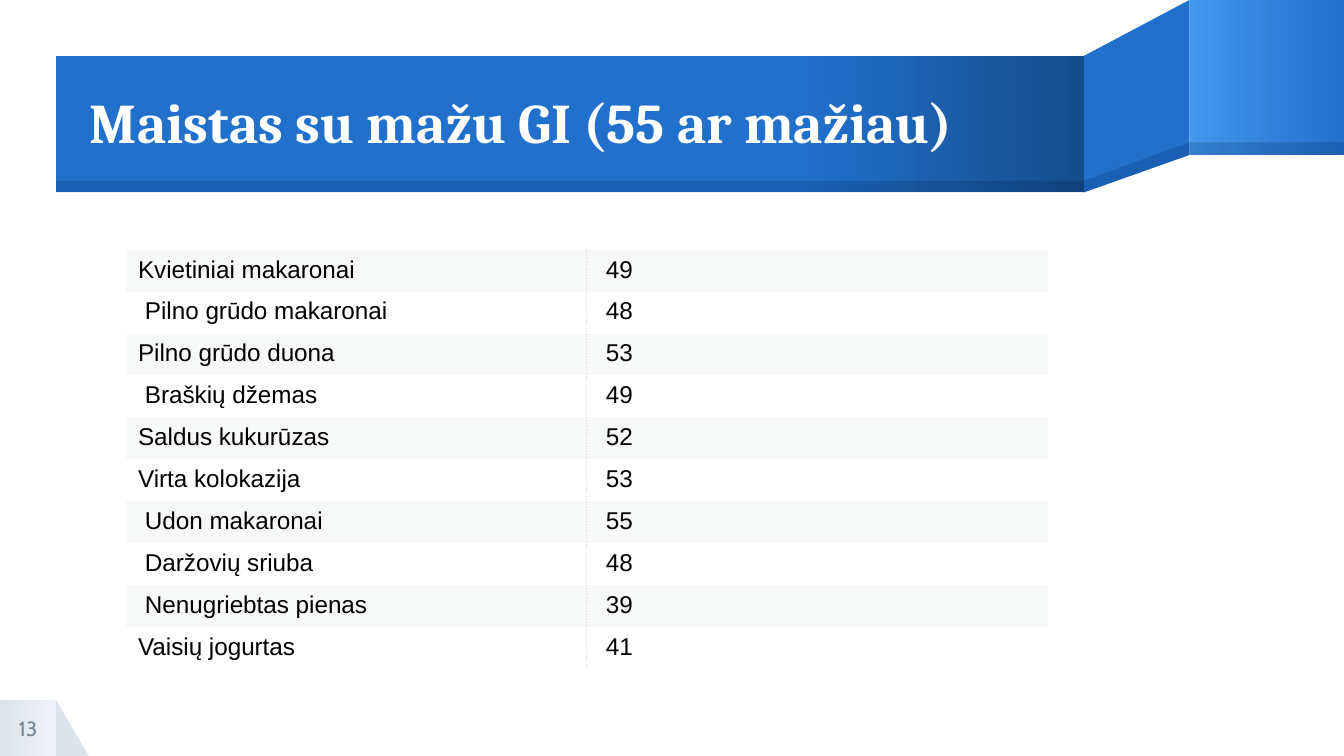
from pptx import Presentation
from pptx.dml.color import RGBColor
from pptx.enum.shapes import MSO_SHAPE as Shape
from pptx.enum.text import MSO_ANCHOR as Anchor, PP_ALIGN as Align
from pptx.oxml import parse_xml
from pptx.oxml.ns import nsdecls, qn
from pptx.util import Cm, Pt
from lxml import etree

TITLE = "Maistas su mažu GI (55 ar mažiau)"
PAGE = "13"
# food, glycaemic index, whether the name is indented
FOODS = [
    ("Kvietiniai makaronai", 49, False),
    ("Pilno grūdo makaronai", 48, True),
    ("Pilno grūdo duona", 53, False),
    ("Braškių džemas", 49, True),
    ("Saldus kukurūzas", 52, False),
    ("Virta kolokazija", 53, False),
    ("Udon makaronai", 55, True),
    ("Daržovių sriuba", 48, True),
    ("Nenugriebtas pienas", 39, True),
    ("Vaisių jogurtas", 41, False),
]
BLUE, NAVY, SHADE = "2170CC", "154C8A", "001F46"
WIDE, HIGH = 25.4, 14.29
EDGE = 1.06                  # left margin, also the page tab's side
FOLD, BACK = 20.48, 22.48    # left and right edges of the ribbon fold
LOW, TOP = 3.64, 2.93        # lower edges of the band and the far panel
LIP, RIM = 3.42, 2.69        # upper edges of their dark strips
NO_GRID = "{2D5ABB26-0587-4C30-8999-92F81FD0307C}"


def rgb(code):
    return RGBColor.from_string(code)


def finish(shape, color, alpha=None):
    """Give a flat fill, with opacity in percent, and no line or shadow."""
    shape.shadow.inherit = False
    shape.line.fill.background()
    shape.fill.solid()
    shape.fill.fore_color.rgb = rgb(color)
    if alpha:
        tint = shape.fill._xPr.find(qn("a:solidFill"))[0]
        etree.SubElement(tint, qn("a:alpha")).set("val", str(alpha * 1000))


def block(x, y, w, h, color, alpha=None, kind=Shape.RECTANGLE):
    shape = slide.shapes.add_shape(kind, Cm(x), Cm(y), Cm(w), Cm(h))
    finish(shape, color, alpha)
    return shape


def fade(shape, start, end, first=0):
    """Blend from left to right, beginning at the share first."""
    shape.fill.gradient()
    shape.fill.gradient_angle = 0
    for stop, color, place in zip(shape.fill.gradient_stops, (start, end), (first, 1)):
        stop.color.rgb = rgb(color)
        stop.position = place


def fold(points, color, alpha=None):
    (x, y), *rest = [(Cm(a), Cm(b)) for a, b in points]
    form = slide.shapes.build_freeform(x, y)
    form.add_line_segments(rest, close=True)
    finish(form.convert_to_shape(), color, alpha)


def style(frame, face, size, color, bold=False):
    for run in frame.paragraphs[0].runs:
        font = run.font
        font.name, font.size, font.bold = face, Pt(size), bold
        font.color.rgb = rgb(color)


def center(frame):
    """Remove the insets and anchor the text in the middle."""
    frame.margin_left = frame.margin_right = 0
    frame.margin_top = frame.margin_bottom = 0
    frame.vertical_anchor = Anchor.MIDDLE
    frame.word_wrap = True


def dots(cell, side):
    """Draw a dotted border on one side, lnL or lnR."""
    line = parse_xml(
        f'<a:{side} {nsdecls("a")} w="6350"><a:solidFill><a:srgbClr val="D3D3D3"/>'
        f'</a:solidFill><a:prstDash val="dot"/></a:{side}>')
    cell._tc.get_or_add_tcPr().insert(0, line)


deck = Presentation()
deck.slide_width, deck.slide_height = Cm(WIDE), Cm(HIGH)
slide = deck.slides.add_slide(deck.slide_layouts[5])

# Page tab
floor = HIGH - EDGE
block(EDGE, floor, 0.62, EDGE, "DDE3EB", kind=Shape.RIGHT_TRIANGLE)
tab = block(0, floor, EDGE, EDGE, "DDE3EB")
fade(tab, "DDE3EB", "F0F3F7")

# Ribbon
fold([(BACK, 0), (FOLD, EDGE), (FOLD, LOW), (BACK, TOP)], BLUE)
fade(block(BACK, 0, WIDE - BACK, TOP, BLUE), "4397EE", BLUE)
fade(block(EDGE, EDGE, FOLD - EDGE, LOW - EDGE, BLUE), BLUE, NAVY, 0.73)
fold([(BACK, RIM), (FOLD, LIP), (FOLD, LOW), (BACK, TOP)], SHADE, 20)
block(BACK, RIM, WIDE - BACK, TOP - RIM, SHADE, 20)
block(EDGE, LIP, FOLD - EDGE, LOW - LIP, SHADE, 20)

# Title, raised above the ribbon
title = slide.shapes.title
slide.shapes._spTree.append(title._element)
title.left, title.top, title.width, title.height = Cm(1.7), Cm(1.09), Cm(18.77), Cm(2.56)
title.text_frame.text = TITLE
center(title.text_frame)
title.text_frame.paragraphs[0].alignment = Align.LEFT
title.text_frame.paragraphs[0].line_spacing = 0.9
style(title.text_frame, "Cambria", 30, "FFFFFF", True)

# Page number
page = slide.shapes.add_textbox(0, Cm(floor), Cm(EDGE), Cm(EDGE)).text_frame
page.text = PAGE
center(page)
page.paragraphs[0].alignment = Align.CENTER
style(page, "Cabin", 11, "748394")

# Food table
frame = slide.shapes.add_table(len(FOODS), 2, Cm(2.38), Cm(4.72), Cm(17.42), Cm(7.85))
table = frame.table
table.first_row = table.horz_banding = False
table._tbl.tblPr.find(qn("a:tableStyleId")).text = NO_GRID
for i, (food, index, inset) in enumerate(FOODS):
    for j, (text, shift) in enumerate([(food, inset), (str(index), True)]):
        cell = table.cell(i, j)
        cell.text = text
        cell.margin_left = Cm(0.36 if shift else 0.23)
        cell.margin_right = Cm(0.23)
        cell.margin_top = cell.margin_bottom = Cm(0.12)
        cell.fill.solid()
        cell.fill.fore_color.rgb = rgb("FFFFFF" if i % 2 else "F7F9F9")
        style(cell.text_frame, "Arial", 13, "000000")
        dots(cell, "lnL" if j else "lnR")

deck.save("out.pptx")
